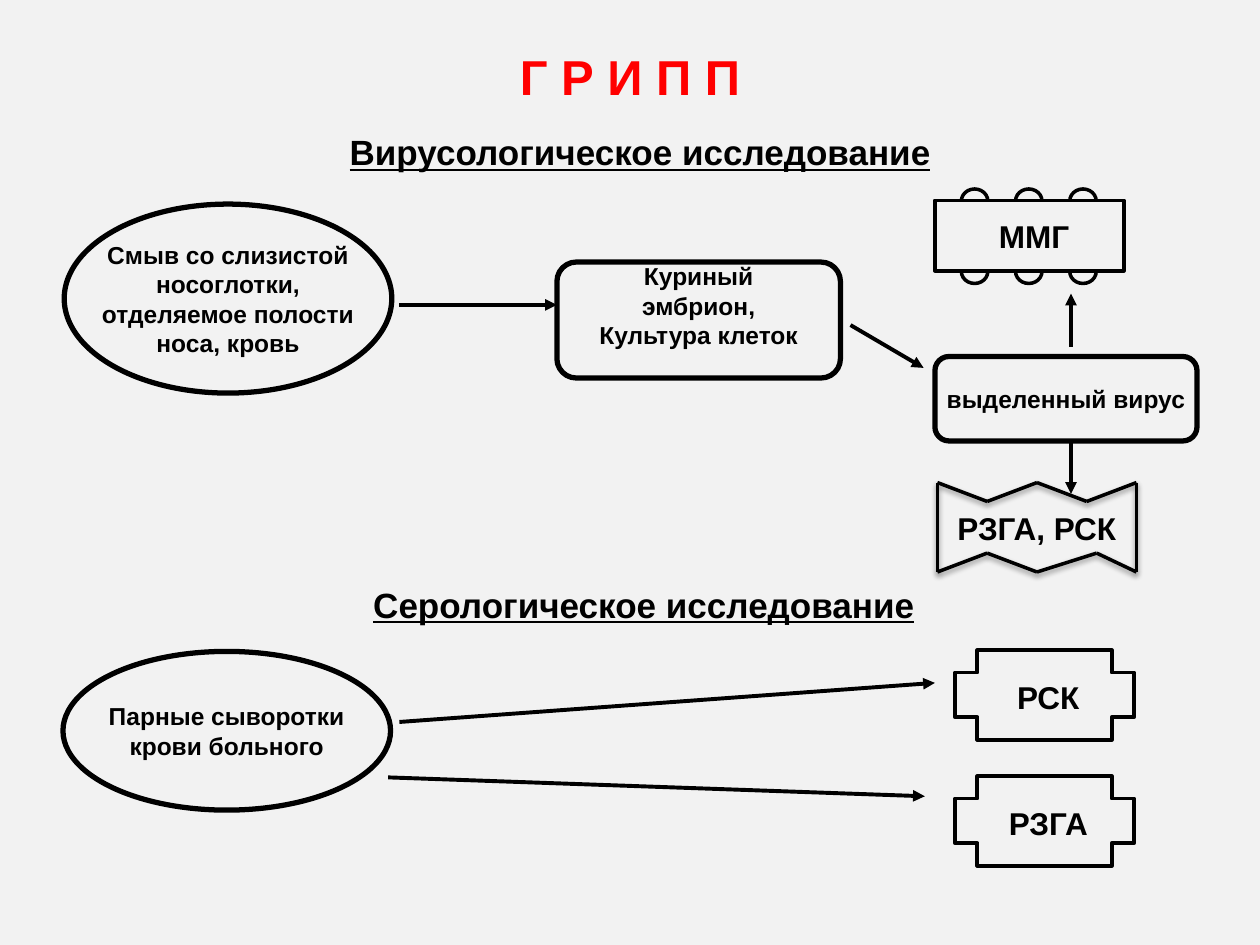
from dataclasses import dataclass
from itertools import pairwise

from lxml.etree import SubElement
from pptx import Presentation
from pptx.dml.color import RGBColor
from pptx.enum.shapes import MSO_CONNECTOR, MSO_SHAPE
from pptx.enum.text import MSO_ANCHOR, PP_ALIGN
from pptx.oxml.ns import qn
from pptx.util import Inches, Pt


@dataclass(frozen=True)
class Theme:
    font: str = "Arial"
    paper: RGBColor = RGBColor(0xF2, 0xF2, 0xF2)
    ink: RGBColor = RGBColor(0, 0, 0)
    accent: RGBColor = RGBColor(0xFF, 0, 0)
    title: float = 28
    heading: float = 20
    result: float = 18
    body: float = 14
    thick: float = 3
    medium: float = 2.25
    thin: float = 2


THEME = Theme()


def write(tf, lines, size, color=THEME.ink, align=PP_ALIGN.CENTER, underline=None):
    for i, line in enumerate(lines):
        p = tf.paragraphs[0] if i == 0 else tf.add_paragraph()
        p.alignment = align
        r = p.add_run()
        r.text = line
        r.font.name = THEME.font
        r.font.size = Pt(size)
        r.font.bold = True
        r.font.underline = underline
        r.font.color.rgb = color


def add_label(s, box, text, size, anchor=MSO_ANCHOR.TOP, **style):
    tf = s.shapes.add_textbox(*map(Inches, box)).text_frame
    tf.word_wrap = True
    tf.vertical_anchor = anchor
    write(tf, [text], size, **style)


def add_outline(s, kind, box, width, fill=None):
    sp = s.shapes.add_shape(kind, *map(Inches, box))
    sp.shadow.inherit = False
    if fill is None:
        sp.fill.background()
    else:
        sp.fill.solid()
        sp.fill.fore_color.rgb = fill
    sp.line.color.rgb = THEME.ink
    sp.line.width = Pt(width)
    return sp


def add_node(s, kind, box, lines):
    sp = add_outline(s, kind, box, THEME.thick)
    tf = sp.text_frame
    tf.word_wrap = False
    tf.vertical_anchor = MSO_ANCHOR.MIDDLE
    write(tf, lines, THEME.body)
    return sp


def add_line(s, start, end, width):
    line = s.shapes.add_connector(MSO_CONNECTOR.STRAIGHT, *map(Inches, (*start, *end)))
    line.line.color.rgb = THEME.ink
    line.line.width = Pt(width)
    effects = SubElement(line.element.spPr, qn("a:effectLst"))
    return line, effects


def add_arrow(s, start, end):
    line, _ = add_line(s, start, end, THEME.medium)
    SubElement(line.line._get_or_add_ln(), qn("a:tailEnd"), type="triangle")


def add_shadowed_line(s, start, end):
    _, effects = add_line(s, start, end, THEME.thin)
    shadow = SubElement(effects, qn("a:outerShdw"), blurRad="40000",
                        dist="20000", dir="5400000", rotWithShape="0")
    color = SubElement(shadow, qn("a:srgbClr"), val=str(THEME.ink))
    SubElement(color, qn("a:alpha"), val="38000")


def add_studded_plate(s, box, text):
    """Plate with three round studs along the top and bottom edges."""
    x, y, w, h = box
    for stud_y in (y - 0.09, y + h - 0.09):
        for i in range(3):
            add_outline(s, MSO_SHAPE.OVAL, (x + 0.21 + 0.43 * i, stud_y, 0.21, 0.19),
                        THEME.thin, THEME.paper)
    add_outline(s, MSO_SHAPE.RECTANGLE, box, THEME.thin, THEME.paper)
    add_label(s, (x + 0.41, y + 0.08, 1.11, 0.4), text, THEME.result,
              align=PP_ALIGN.LEFT)


def add_banner(s, box, text):
    """Zigzag banner drawn as shadowed lines."""
    x, y, w, h = box
    notch = 0.15
    top = [(x, y), (x + w / 4, y + notch), (x + w / 2, y),
           (x + w * 3 / 4, y + notch), (x + w, y)]
    bottom = [(x, y + h), (x + w / 4, y + h - notch), (x + w / 2, y + h),
              (x + w * 0.8, y + h - notch), (x + w, y + h)]
    for edge in (top, bottom, (top[0], bottom[0]), (top[-1], bottom[-1])):
        for start, end in pairwise(edge):
            add_shadowed_line(s, start, end)
    add_label(s, (x + 0.06, y + 0.16, w, 0.4), text, THEME.result,
              align=PP_ALIGN.LEFT)


def add_cross(s, box, text):
    """Wide cross: a tall one turned by 90 degrees about its centre."""
    x, y, w, h = box
    sp = add_outline(s, MSO_SHAPE.CROSS,
                     (x + (w - h) / 2, y + (h - w) / 2, h, w), THEME.medium)
    sp.adjustments[0] = 0.25
    sp.rotation = 90
    add_label(s, (x + 0.23, y + 0.17, 1.02, 0.4), text, THEME.result)


def add_virology(s, x, y):
    add_label(s, (x + 2.14, y, 4.88, 0.44), "Вирусологическое исследование",
              THEME.heading, underline=True)
    # Sample, culture, isolated virus
    add_node(s, MSO_SHAPE.OVAL, (x + 0.01, y + 0.63, 2.6, 1.5),
             ["Смыв со слизистой", "носоглотки,", "отделяемое полости", "носа, кровь"])
    culture = add_node(s, MSO_SHAPE.ROUNDED_RECTANGLE, (x + 3.92, y + 1.09, 2.25, 0.92),
                       ["Куриный", "эмбрион,", "Культура клеток"])
    culture.text_frame.margin_bottom = Inches(0.28)
    add_node(s, MSO_SHAPE.ROUNDED_RECTANGLE, (x + 6.92, y + 1.84, 2.08, 0.67),
             ["выделенный вирус"])
    # Identification methods
    add_studded_plate(s, (x + 6.92, y + 0.6, 1.5, 0.56), "ММГ")
    add_banner(s, (x + 6.94, y + 2.84, 1.58, 0.71), "РЗГА, РСК")
    # Flow
    for x1, y1, x2, y2 in [(2.67, 1.43, 3.92, 1.43), (6.25, 1.59, 6.83, 1.93),
                           (8, 1.76, 8, 1.34), (8, 2.51, 8, 2.93)]:
        add_arrow(s, (x + x1, y + y1), (x + x2, y + y2))


def add_serology(s, x, y):
    add_label(s, (x + 2.17, y, 4.88, 0.44), "Серологическое исследование",
              THEME.heading, underline=True)
    add_node(s, MSO_SHAPE.OVAL, (x, y + 0.59, 2.6, 1.26),
             ["Парные сыворотки", "крови больного"])
    for i, test in enumerate(("РСК", "РЗГА")):
        add_cross(s, (x + 7.08, y + 0.58 + i, 1.42, 0.71), test)
    add_arrow(s, (x + 2.67, y + 1.15), (x + 6.92, y + 0.84))
    add_arrow(s, (x + 2.58, y + 1.59), (x + 6.84, y + 1.74))


def main():
    prs = Presentation()
    prs.slide_width, prs.slide_height = Inches(10), Inches(7.5)
    s = prs.slides.add_slide(prs.slide_layouts[6])
    s.background.fill.solid()
    s.background.fill.fore_color.rgb = THEME.paper
    add_label(s, (0.5, 0.3, 9, 0.61), "Г Р И П П", THEME.title,
              MSO_ANCHOR.MIDDLE, color=THEME.accent)
    add_virology(s, 0.5, 0.99)
    add_serology(s, 0.5, 4.58)
    prs.save("out.pptx")


if __name__ == "__main__":
    main()
